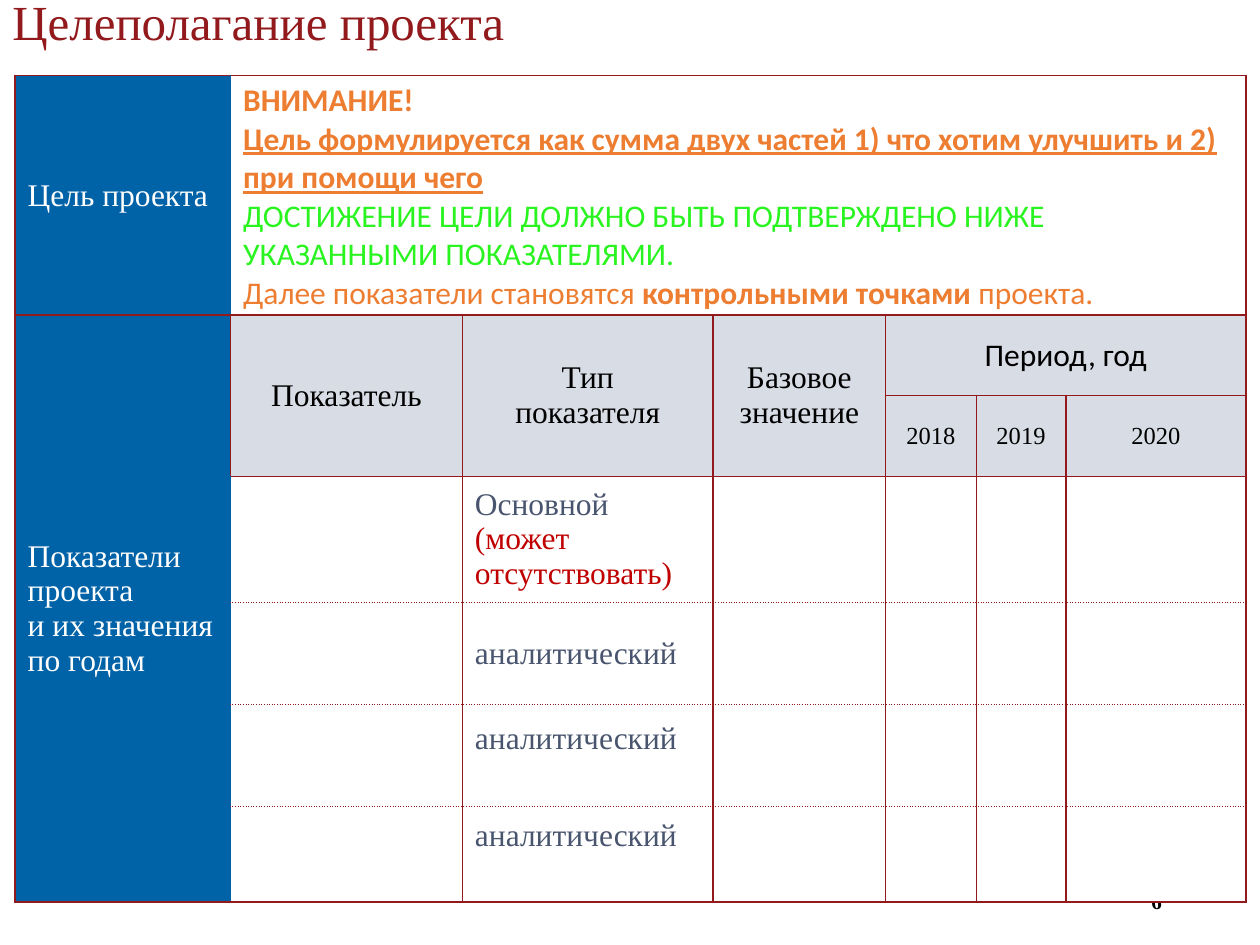
"""Build the project goal-setting slide with its table of indicators."""
from lxml.etree import SubElement
from pptx import Presentation
from pptx.dml.color import RGBColor
from pptx.enum.text import MSO_ANCHOR, PP_ALIGN
from pptx.oxml.ns import qn
from pptx.util import Inches, Pt

RED = RGBColor(0x92, 0x1A, 0x1D)
BLUE = RGBColor(0x00, 0x62, 0xA7)
WHITE = RGBColor(0xFF, 0xFF, 0xFF)
BLACK = RGBColor(0x00, 0x00, 0x00)
GREY = RGBColor(0xD8, 0xDC, 0xE5)
ORANGE = RGBColor(0xED, 0x7D, 0x31)
GREEN = RGBColor(0x2A, 0xF4, 0x20)
SLATE = RGBColor(0x49, 0x55, 0x6E)
WARNING_RED = RGBColor(0xC0, 0x00, 0x00)

SERIF = "Times New Roman"
SANS = "Calibri"
COLUMNS = [1.71, 1.84, 1.99, 1.37, 0.72, 0.71, 1.43]
ROWS = [1.61, 0.64, 0.64, 0.77, 0.81, 0.81, 0.76]
MERGES = [
    ((0, 1), (0, 6)), ((1, 0), (6, 0)), ((1, 1), (2, 1)),
    ((1, 2), (2, 2)), ((1, 3), (2, 3)), ((1, 4), (1, 6)),
]
HEADER_ROWS = (1, 2)
FIRST_DATA_ROW = 3
LAST_ROW = len(ROWS) - 1

GOAL = [
    [("ВНИМАНИЕ!", ORANGE, "b")],
    [("Цель формулируется как сумма двух частей 1) что хотим улучшить и 2) при помощи чего", ORANGE, "bu")],
    [("ДОСТИЖЕНИЕ ЦЕЛИ ДОЛЖНО БЫТЬ ПОДТВЕРЖДЕНО НИЖЕ УКАЗАННЫМИ ПОКАЗАТЕЛЯМИ.", GREEN, "")],
    [("Далее показатели становятся ", ORANGE, ""), ("контрольными точками ", ORANGE, "b"),
     ("проекта.", ORANGE, "")],
]
MAIN_TYPE = [[("Основной ", SLATE, ""), ("(может отсутствовать)", WARNING_RED, "")]]
SIDE_LABELS = {
    (0, 0): ["Цель проекта"],
    (1, 0): ["Показатели", "проекта", "и их значения", "по годам"],
}
HEADINGS = {
    (1, 1): (["Показатель"], SERIF, 18),
    (1, 2): (["Тип", "показателя"], SERIF, 18),
    (1, 3): (["Базовое", "значение"], SERIF, 18),
    (1, 4): (["Период, год"], SANS, 18),
    (2, 4): (["2018"], SERIF, 14),
    (2, 5): (["2019"], SERIF, 14),
    (2, 6): (["2020"], SERIF, 14),
}
ANALYTIC_MARGINS = {4: 0.05, 5: 0.32, 6: 0.35}


def plain(lines, color, style=""):
    return [[(line, color, style)] for line in lines]


def write(frame, paragraphs, font=SERIF, size=18, align=PP_ALIGN.LEFT):
    for index, runs in enumerate(paragraphs):
        paragraph = frame.paragraphs[0] if index == 0 else frame.add_paragraph()
        paragraph.alignment = align
        for text, color, style in runs:
            run = paragraph.add_run()
            run.text = text
            run.font.name = font
            run.font.size = Pt(size)
            run.font.color.rgb = color
            run.font.bold = "b" in style
            run.font.underline = "u" in style


def add_text(slide, box, paragraphs, **options):
    shape = slide.shapes.add_textbox(*map(Inches, box))
    frame = shape.text_frame
    frame.word_wrap = True
    frame.vertical_anchor = MSO_ANCHOR.MIDDLE
    write(frame, paragraphs, **options)
    return frame


def set_border(cell, side, color, dash):
    line = SubElement(cell._tc.get_or_add_tcPr(), qn(f"a:ln{side}"), w=str(Pt(1)))
    fill = SubElement(line, qn("a:solidFill"))
    SubElement(fill, qn("a:srgbClr"), val=str(color))
    SubElement(line, qn("a:prstDash"), val=dash)


def format_cell(cell, row, column):
    header = row in HEADER_ROWS
    left = BLUE if column == 1 and not header else RED
    right = BLUE if column == 0 and not header else RED
    data = column > 0 and row >= FIRST_DATA_ROW
    top = "sysDot" if data and row > FIRST_DATA_ROW else "solid"
    bottom = "sysDot" if data and row < LAST_ROW else "solid"
    set_border(cell, "L", left, "solid")
    set_border(cell, "R", right, "solid")
    set_border(cell, "T", RED, top)
    set_border(cell, "B", RED, bottom)
    cell.fill.solid()
    cell.fill.fore_color.rgb = BLUE if column == 0 else GREY if header else WHITE
    cell.vertical_anchor = MSO_ANCHOR.MIDDLE


def add_goal_table(slide):
    shape = slide.shapes.add_table(
        len(ROWS), len(COLUMNS), Inches(0.12), Inches(0.6), Inches(9.76), Inches(6.58))
    table = shape.table
    table.first_row = False
    table.horz_banding = False
    for column, width in zip(table.columns, COLUMNS):
        column.width = Inches(width)
    for row, height in zip(table.rows, ROWS):
        row.height = Inches(height)
    shape.height = Inches(6.58)
    for row in range(len(ROWS)):
        for column in range(len(COLUMNS)):
            format_cell(table.cell(row, column), row, column)
    for start, end in MERGES:
        table.cell(*start).merge(table.cell(*end))

    for place, lines in SIDE_LABELS.items():
        write(table.cell(*place).text_frame, plain(lines, WHITE))
    for place, (lines, font, size) in HEADINGS.items():
        write(table.cell(*place).text_frame, plain(lines, BLACK), font, size, PP_ALIGN.CENTER)
    goal_cell = table.cell(0, 1)
    goal_cell.vertical_anchor = MSO_ANCHOR.TOP
    write(goal_cell.text_frame, GOAL, SANS)
    write(table.cell(FIRST_DATA_ROW, 2).text_frame, MAIN_TYPE)
    for row, margin in ANALYTIC_MARGINS.items():
        cell = table.cell(row, 2)
        cell.margin_bottom = Inches(margin)
        write(cell.text_frame, plain(["аналитический"], SLATE))


def main():
    presentation = Presentation()
    presentation.slide_width = Inches(10)
    presentation.slide_height = Inches(7.5)
    slide = presentation.slides.add_slide(presentation.slide_layouts[6])
    add_text(slide, (7.07, 6.95, 2.25, 0.4), plain(["6"], BLACK, "b"), size=12, align=PP_ALIGN.RIGHT)
    add_goal_table(slide)
    title = add_text(slide, (0, 0, 7.4, 0.39), plain(["Целеполагание проекта"], RED), size=28)
    title.paragraphs[0].line_spacing = 0.9
    presentation.save("out.pptx")


if __name__ == "__main__":
    main()
